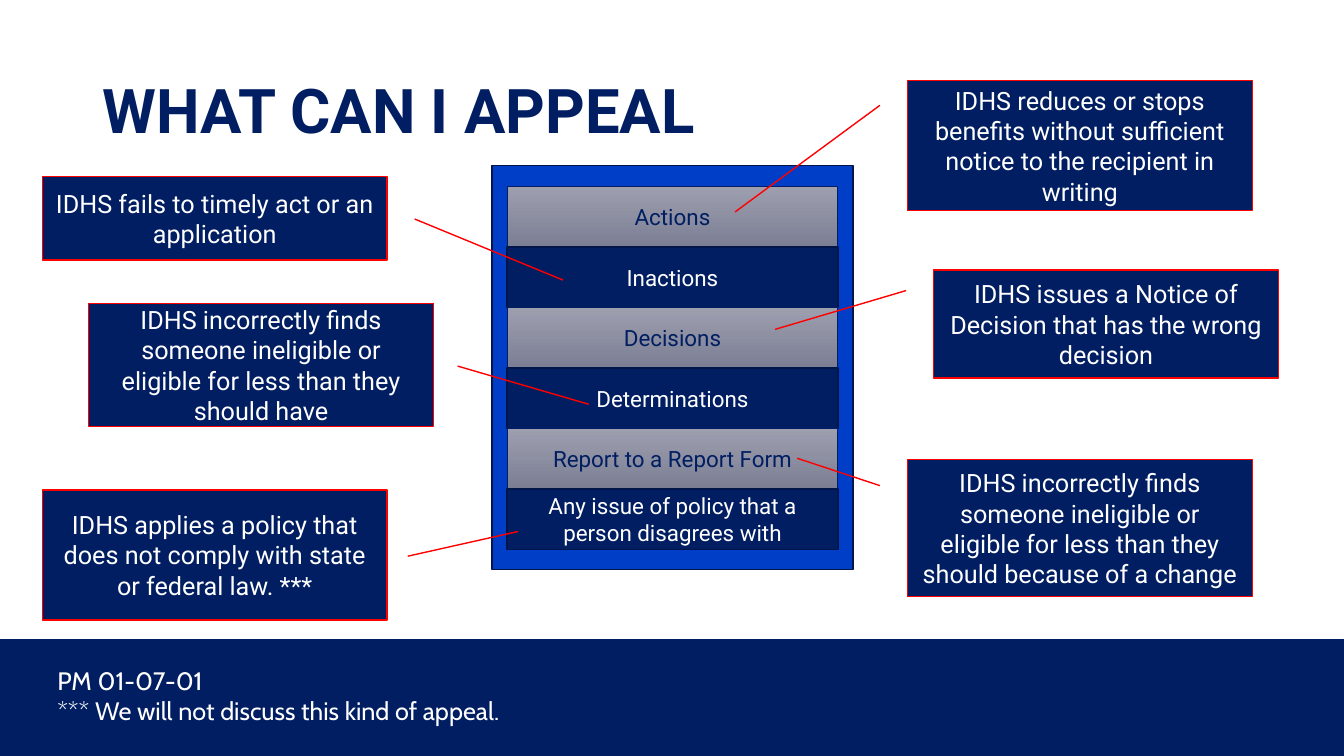
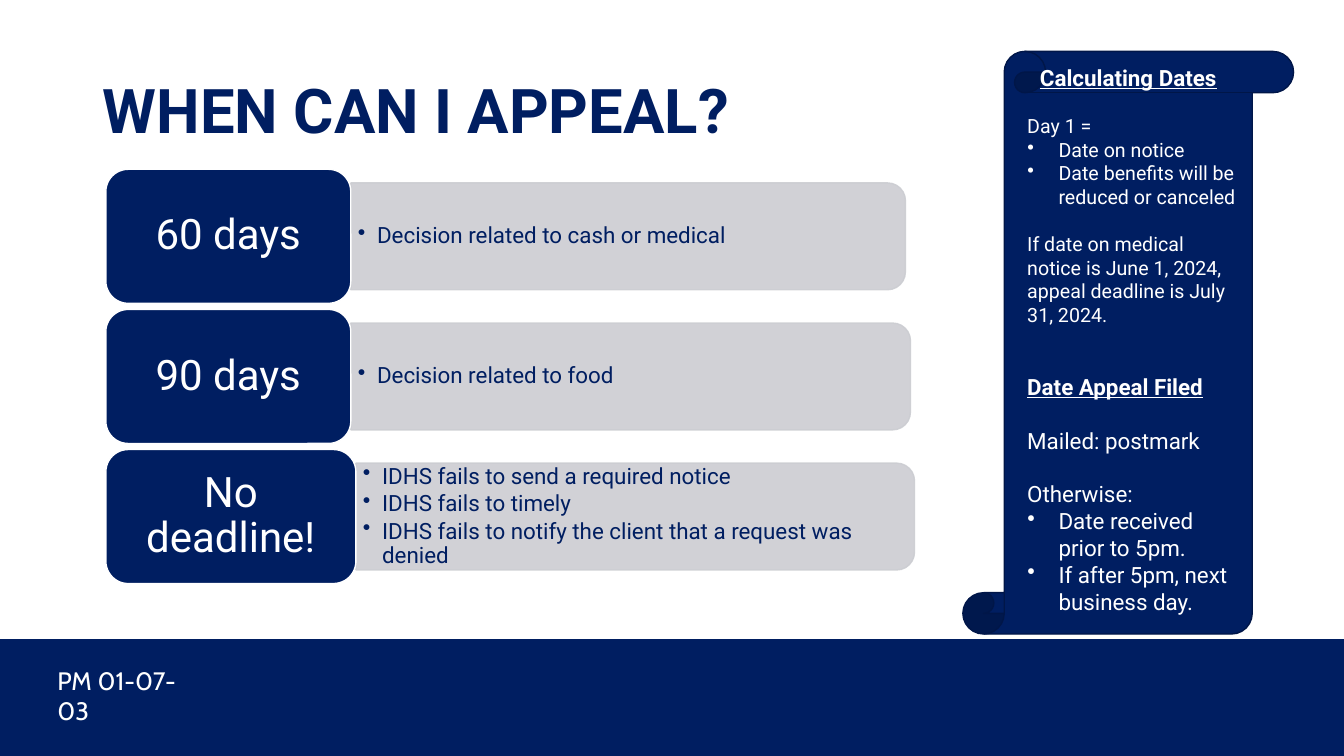
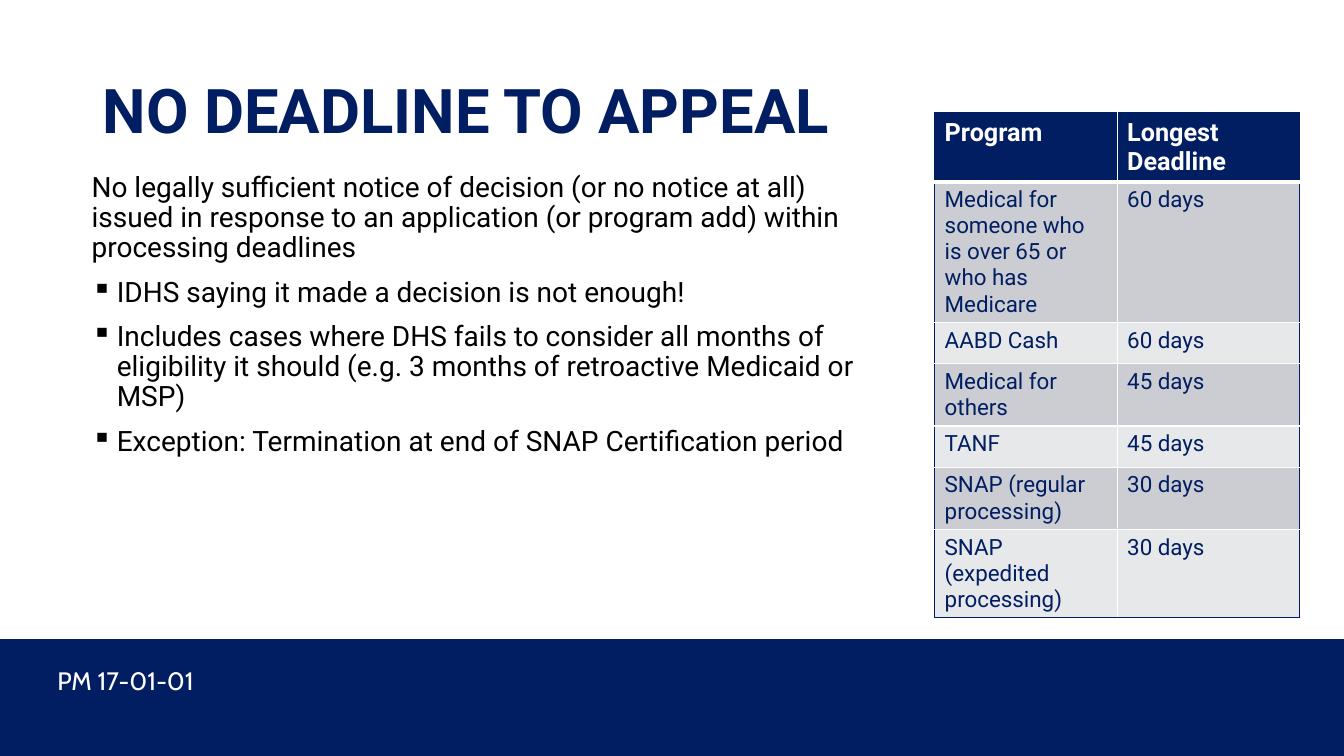
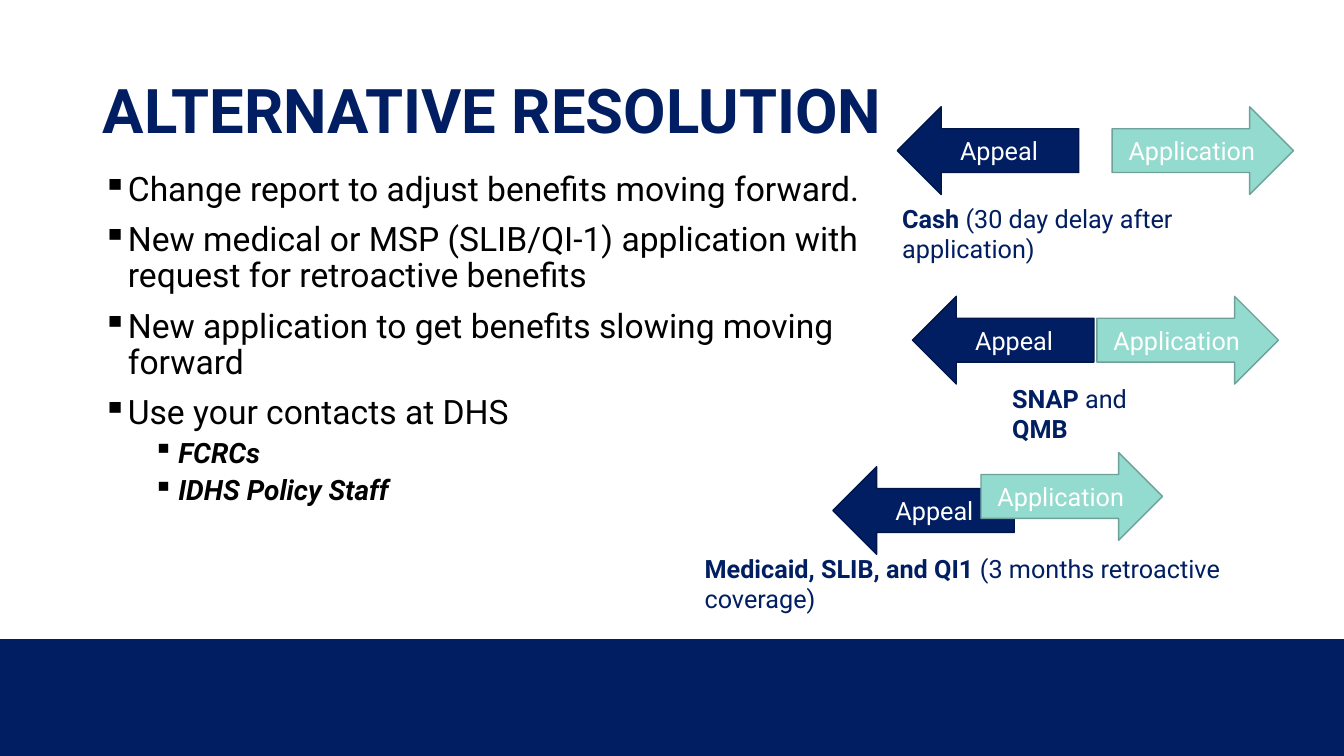
from lxml.etree import SubElement
from pptx import Presentation
from pptx.dml.color import RGBColor
from pptx.enum.shapes import MSO_SHAPE
from pptx.enum.text import MSO_ANCHOR, MSO_AUTO_SIZE, PP_ALIGN
from pptx.oxml.ns import qn
from pptx.util import Inches, Pt

# Shared look
NAVY, DEEP_NAVY, BLUE = "001E61", "001648", "003EC8"
WHITE, BLACK, RED = "FFFFFF", "000000", "FF0000"
GREY, PALE_GREY = "CCCDD2", "E7E8EA"
GRADIENT = ("9D9FAF", "7C7E94")
MINT, MINT_LINE = "93DACF", "6DA199"
TEXT_FONT, FOOTER_FONT = "Roboto", "Cabin"
LEFT, CENTER = PP_ALIGN.LEFT, PP_ALIGN.CENTER
TITLE_BOX = (0.92, 0.4, 11.5, 1.45)
BAND_BOX = (0, 6.34, 13.33, 1.16)

# Slide 1: grounds for appeal, and callouts as
# (box, points left, line as y1, x1, y2, x2 in box shares, text)
GROUNDS = ["Actions", "Inactions", "Decisions", "Determinations",
           "Report to a Report Form",
           "Any issue of policy that a person disagrees with"]
CALLOUTS = [
    ((9, 0.8, 3.42, 1.29), False, (0.19, -0.08, 1.01, -0.5),
     "IDHS reduces or stops benefits without sufficient notice to the "
     "recipient in writing"),
    ((0.42, 1.75, 3.42, 0.83), True, (0.51, -0.08, 1.24, -0.51),
     "IDHS fails to timely act or an application"),
    ((9.26, 2.68, 3.42, 1.07), False, (0.19, -0.08, 0.55, -0.46),
     "IDHS issues a Notice of Decision that has the wrong decision"),
    ((0.88, 3.01, 3.42, 1.22), True, (0.51, -0.07, 0.82, -0.45),
     "IDHS incorrectly finds someone ineligible or eligible for less than "
     "they should have"),
    ((9, 4.56, 3.42, 1.36), False, (0.19, -0.08, -0.01, -0.32),
     "IDHS incorrectly finds someone ineligible or eligible for less than "
     "they should because of a change"),
    ((0.42, 4.86, 3.42, 1.29), True, (0.51, -0.06, 0.32, -0.38),
     "IDHS applies a policy that does not comply with state or federal law. "
     "***"),
]

# Slide 2: (label, label width, bar width, points)
DEADLINES = [
    ("60 days", 2.43, 5.5, ["Decision related to cash or medical"]),
    ("90 days", 2.43, 5.55, ["Decision related to food"]),
    ("No deadline!", 2.48, 5.54,
     ["IDHS fails to send a required notice", "IDHS fails to timely",
      "IDHS fails to notify the client that a request was denied"]),
]
HEADING = {"size": 16, "bold": True, "underline": True}
PLAIN = {"size": 14, "indent": (0.13, 0)}
POINT = {"size": 14, "indent": (0.44, -0.31), "bullet": "•"}
SCROLL = [
    {"text": "Calculating Dates", "align": CENTER, **HEADING},
    {**PLAIN, "text": "Day 1 =", "before": 16.8},
    {**POINT, "text": "Date on notice"},
    {**POINT, "text": "Date benefits will be reduced or canceled"},
    {**PLAIN, "before": 16.8,
     "text": "If date on medical notice is June 1, 2024, appeal deadline is "
             "July 31, 2024."},
    {**PLAIN, **HEADING, "text": "Date Appeal Filed", "before": 33.6},
    {**PLAIN, "size": 16, "text": "Mailed: postmark", "before": 19.2},
    {**PLAIN, "size": 16, "text": "Otherwise:", "before": 19.2},
    {**POINT, "size": 16, "text": "Date received prior to 5pm."},
    {**POINT, "size": 16, "text": "If after 5pm, next business day."},
]

# Slide 3
SQUARE = {"bullet": "▪", "indent": (0.25, -0.25), "before": 10}
NO_DEADLINE = [
    {"text": "No legally sufficient notice of decision (or no notice at all) "
             "issued in response to an application (or program add) within "
             "processing deadlines"},
    {**SQUARE, "text": "IDHS saying it made a decision is not enough!"},
    {**SQUARE,
     "text": "Includes cases where DHS fails to consider all months of "
             "eligibility it should (e.g. 3 months of retroactive Medicaid "
             "or MSP)"},
    {**SQUARE,
     "text": "Exception: Termination at end of SNAP Certification period"},
]
PROGRAMS = [
    ("Program", "Longest Deadline"),
    ("Medical for someone who is over 65 or who has Medicare", "60 days"),
    ("AABD Cash", "60 days"),
    ("Medical for others", "45 days"),
    ("TANF", "45 days"),
    ("SNAP (regular processing)", "30 days"),
    ("SNAP (expedited processing)", "30 days"),
]

# Slide 4
SUB_POINT = {"bullet": "▪", "indent": (0.75, -0.25), "before": 5,
             "size": 20, "bold": True, "italic": True, "level": 1}
RESOLUTIONS = [
    {**SQUARE, "before": 0,
     "text": "Change report to adjust benefits moving forward."},
    {**SQUARE, "text": "New medical or MSP (SLIB/QI-1) application with "
                       "request for retroactive benefits"},
    {**SQUARE,
     "text": "New application to get benefits slowing moving forward"},
    {**SQUARE, "text": "Use your contacts at DHS"},
    {**SUB_POINT, "text": "FCRCs"},
    {**SUB_POINT, "text": "IDHS Policy Staff"},
]
# (appeal corner, application corner, caption box, caption as (text, bold))
TIMELINES = [
    ((8.9, 1.06), (11.03, 1.06), (8.85, 1.97, 4, 0.71),
     [("Cash", True), (" (30 day delay after application)", False)]),
    ((9.05, 2.94), (10.88, 2.94), (9.94, 3.75, 1.8, 0.71),
     [("SNAP ", True), ("and", False), (" QMB", True)]),
    ((8.26, 4.63), (9.73, 4.49), (6.89, 5.44, 6.35, 0.71),
     [("Medicaid, SLIB, and QI1 ", True),
      ("(3 months retroactive coverage)", False)]),
]


def rgb(color):
    return RGBColor.from_string(color)


def inches(*lengths):
    return [Inches(length) for length in lengths]


def add_para(frame, index, item, size, color, font, align, spacing):
    """Write one paragraph; item is a string or a dict of text and format."""
    if isinstance(item, str):
        item = {"text": item}
    para = frame.paragraphs[0] if index == 0 else frame.add_paragraph()
    spans = item["text"]
    for text, bold in [(spans, None)] if isinstance(spans, str) else spans:
        span = para.add_run()
        span.text = text
        span.font.bold = bold
    para.level = item.get("level", 0)
    para.alignment = item.get("align", align)
    para.line_spacing = spacing
    para.space_before = Pt(item.get("before", 0))
    para.space_after = Pt(item.get("after", 0))
    margin, first = inches(*item.get("indent", (0, 0)))
    props = para._p.get_or_add_pPr()
    props.set("marL", str(margin))
    props.set("indent", str(first))
    if "bullet" in item:
        SubElement(props, qn("a:buChar")).set("char", item["bullet"])
    para.font.name = font
    para.font.size = Pt(item.get("size", size))
    para.font.bold = item.get("bold", False)
    para.font.italic = item.get("italic", False)
    para.font.underline = item.get("underline", False)
    para.font.color.rgb = rgb(color)


def write(frame, items, size, color, font=TEXT_FONT, align=LEFT, spacing=1.0,
          anchor=MSO_ANCHOR.TOP, margins=(0.1, 0.05, 0.1, 0.05)):
    frame.word_wrap = True
    frame.auto_size = MSO_AUTO_SIZE.NONE
    frame.vertical_anchor = anchor
    (frame.margin_left, frame.margin_top,
     frame.margin_right, frame.margin_bottom) = inches(*margins)
    for index, item in enumerate(items):
        add_para(frame, index, item, size, color, font, align, spacing)


def add_text(page, box, items, size, color, **style):
    write(page.shapes.add_textbox(*inches(*box)).text_frame,
          items, size, color, **style)


def add_shape(page, kind, box, fill, line=None, width=1):
    shape = page.shapes.add_shape(kind, *inches(*box))
    shape.shadow.inherit = False
    if isinstance(fill, tuple):
        shape.fill.gradient()
        shape.fill.gradient_angle = 270
        for stop, color in zip(shape.fill.gradient_stops, fill):
            stop.color.rgb = rgb(color)
    else:
        shape.fill.solid()
        shape.fill.fore_color.rgb = rgb(fill)
    if line:
        shape.line.color.rgb = rgb(line)
        shape.line.width = Pt(width)
    else:
        shape.line.fill.background()
    return shape


def label(shape, text, size, color=WHITE, **style):
    write(shape.text_frame, [text], size, color, align=CENTER,
          anchor=MSO_ANCHOR.MIDDLE, **style)


def add_page(deck, title, footer=(), footer_width=1.66):
    page = deck.slides.add_slide(deck.slide_layouts[5])
    head = page.shapes.title
    head.left, head.top, head.width, head.height = inches(*TITLE_BOX)
    write(head.text_frame, [{"text": title, "bold": True}], 44, NAVY,
          spacing=0.9, anchor=MSO_ANCHOR.MIDDLE)
    if footer:
        add_text(page, (0.47, 6.55, footer_width, 0.71), footer, 18, WHITE,
                 font=FOOTER_FONT)
    return page


def add_band_to_layout(page):
    band = add_shape(page, MSO_SHAPE.RECTANGLE, BAND_BOX, NAVY)
    page.slide_layout.shapes.element.insert(2, band.element)


def set_borders(cell, sides):
    props = cell._tc.get_or_add_tcPr()
    for side in ("L", "R", "T", "B"):
        color, width = sides[side]
        line = SubElement(props, qn("a:ln" + side), w=str(Pt(width)))
        fill = SubElement(line, qn("a:solidFill"))
        SubElement(fill, qn("a:srgbClr"), val=color)


def what_page(deck):
    page = add_page(deck, "WHAT CAN I APPEAL",
                    ["PM 01-07-01",
                     "*** We will not discuss this kind of appeal."], 4.86)
    add_band_to_layout(page)
    add_shape(page, MSO_SHAPE.RECTANGLE, (4.88, 1.64, 3.58, 4.01), BLUE,
              DEEP_NAVY)
    for row, ground in enumerate(GROUNDS):
        light = row % 2 == 0
        cell = add_shape(page, MSO_SHAPE.RECTANGLE,
                         (5.03, 1.85 + 0.6 * row, 3.28, 0.6),
                         GRADIENT if light else NAVY,
                         NAVY if light else DEEP_NAVY, 0.5 if light else 1)
        label(cell, ground, 16, NAVY if light else WHITE)
    for box, mirrored, line, text in CALLOUTS:
        callout = add_shape(page, MSO_SHAPE.LINE_CALLOUT_1, box, NAVY, RED)
        for index, share in enumerate(line):
            callout.adjustments[index] = share
        if mirrored:
            callout.element.spPr.find(qn("a:xfrm")).set("flipH", "1")
        label(callout, text, 18)


def when_page(deck):
    page = add_page(deck, "WHEN CAN I APPEAL?", ["PM 01-07-03"])
    left, height, bar_height = 1.05, 1.33, 1.06
    for row, (days, width, bar_width, points) in enumerate(DEADLINES):
        top = 1.68 + 1.39 * row
        middle, bar_left = top + height / 2, left + width
        # The bar is an upright shape turned on its side
        bar = add_shape(page, MSO_SHAPE.ROUND_2_SAME_RECTANGLE,
                        (bar_left + (bar_width - bar_height) / 2,
                         middle - bar_width / 2, bar_height, bar_width),
                        GREY, GREY)
        bar.rotation = 90
        for color in bar.element.spPr.iter(qn("a:srgbClr")):
            SubElement(color, qn("a:alpha"), val="90000")
        items = [{"text": point, "bullet": "•", "indent": (0.19, -0.19),
                  "after": 2.4} for point in points]
        add_text(page, (bar_left, middle - 0.48, bar_width - 0.05, 0.96),
                 items, 16, NAVY, spacing=0.9, anchor=MSO_ANCHOR.MIDDLE,
                 margins=(0.07, 0.03, 0.07, 0.03))
        tile = add_shape(page, MSO_SHAPE.ROUNDED_RECTANGLE,
                         (left, top, width, height), NAVY, WHITE)
        label(tile, days, 30, spacing=0.9, margins=(0.12, 0.06, 0.12, 0.06))
    scroll = add_shape(page, MSO_SHAPE.VERTICAL_SCROLL,
                       (9.55, 0.51, 3.28, 5.78), NAVY, DEEP_NAVY)
    write(scroll.text_frame, SCROLL, 14, WHITE, anchor=MSO_ANCHOR.MIDDLE,
          margins=(0.1, 0.05, 0.1, 0.32))


def no_deadline_page(deck):
    page = add_page(deck, "NO DEADLINE TO APPEAL", ["PM 17-01-01"])
    add_text(page, (0.81, 1.67, 7.89, 4.2), NO_DEADLINE, 20, BLACK,
             spacing=0.9)
    last = len(PROGRAMS) - 1
    table = page.shapes.add_table(
        len(PROGRAMS), 2,
        *inches(9.27, 1.12, 3.62, 0.41 * len(PROGRAMS))).table
    for row, texts in enumerate(PROGRAMS):
        for column, text in enumerate(texts):
            cell = table.cell(row, column)
            head = row == 0
            set_borders(cell, {
                "L": (WHITE if column else NAVY, 1),
                "R": (NAVY if column else WHITE, 1),
                "T": (NAVY, 1) if head else (WHITE, 3 if row == 1 else 1),
                "B": (NAVY if row == last else WHITE, 3 if head else 1)})
            cell.fill.solid()
            cell.fill.fore_color.rgb = rgb(
                NAVY if head else GREY if row % 2 else PALE_GREY)
            add_para(cell.text_frame, 0, {"text": text, "bold": head},
                     18 if head else 16, WHITE if head else NAVY,
                     TEXT_FONT, LEFT, 1.0)


def alternative_page(deck):
    page = add_page(deck, "ALTERNATIVE RESOLUTION")
    add_text(page, (0.92, 1.66, 8.18, 4.2), RESOLUTIONS, 24, BLACK,
             spacing=0.9)
    for appeal, application, caption_box, caption in TIMELINES:
        add_text(page, caption_box, [{"text": caption}], 18, NAVY)
        for text, kind, corner, fill, line in (
                ("Appeal", MSO_SHAPE.LEFT_ARROW, appeal, NAVY, DEEP_NAVY),
                ("Application", MSO_SHAPE.RIGHT_ARROW, application, MINT,
                 MINT_LINE)):
            arrow = add_shape(page, kind, (*corner, 1.8, 0.87), fill, line)
            label(arrow, text, 18)


def main():
    deck = Presentation()
    deck.slide_width, deck.slide_height = inches(13.33, 7.5)
    for build in (what_page, when_page, no_deadline_page, alternative_page):
        build(deck)
    deck.save("out.pptx")


if __name__ == "__main__":
    main()
